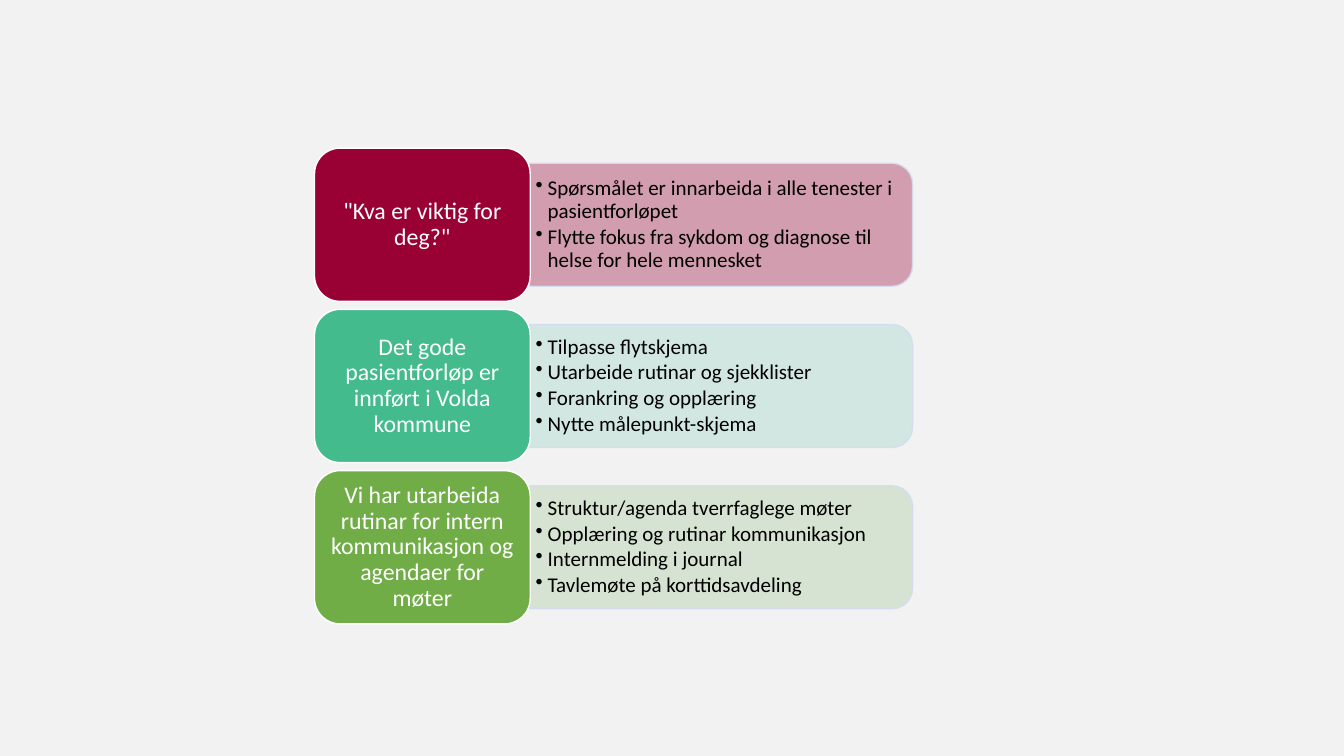
import pptx
import pptx.util
import pptx.dml.color
import pptx.enum.shapes
import pptx.enum.text
import pptx.oxml
import pptx.oxml.ns

Inches = pptx.util.Inches
Pt = pptx.util.Pt
ShapeKind = pptx.enum.shapes.MSO_SHAPE
Align = pptx.enum.text.PP_ALIGN

# Slide size in inches and its grid of 100 columns by 100 rows
WIDTH, HEIGHT = 13.333, 7.5
COLUMN, ROW = WIDTH / 100, HEIGHT / 100

# Layout in columns and rows
GOAL_LEFT, GOAL_WIDTH, GOAL_HEIGHT = 23.4, 16.05, 20.27
PANEL_LEFT, PANEL_WIDTH, PANEL_HEIGHT = 39.4, 28.5, 16.27
TEXT_WIDTH, TEXT_HEIGHT = 28.05, 14.67
FIRST_MIDDLE, PITCH = 29.73, 21.33

COLOURS = {
    "background": "F2F2F2",
    "panel_line": "D2DEEF",
    "white": "FFFFFF",
    "black": "000000",
    "red": "990033",
    "green": "43BB8D",
    "pale_green": "CFE6E0",
    "olive": "70AD47",
    "pale_olive": "D4E2CF",
}

# Goal, goal colour, panel colour, panel opacity in percent, measures
GOALS = [
    ('"Kva er viktig for deg?"', "red", "red", 35, [
        "Spørsmålet er innarbeida i alle tenester i pasientforløpet",
        "Flytte fokus fra sykdom og diagnose til helse for hele mennesket",
    ]),
    ("Det gode pasientforløp er innført i Volda kommune", "green", "pale_green", 90, [
        "Tilpasse flytskjema",
        "Utarbeide rutinar og sjekklister",
        "Forankring og opplæring",
        "Nytte målepunkt-skjema",
    ]),
    ("Vi har utarbeida rutinar for intern kommunikasjon og agendaer for møter",
     "olive", "pale_olive", 90, [
         "Struktur/agenda tverrfaglege møter",
         "Opplæring og rutinar kommunikasjon",
         "Internmelding i journal",
         "Tavlemøte på korttidsavdeling",
     ]),
]


def colour(name):
    return pptx.dml.color.RGBColor.from_string(COLOURS[name])


def set_opacity(fill_format, percent):
    """Add an alpha value to a solid fill whose colour is already set."""
    element = fill_format._xPr.find(pptx.oxml.ns.qn("a:solidFill"))[0]
    alpha = pptx.oxml.parse_xml(
        f'<a:alpha {pptx.oxml.ns.nsdecls("a")} val="{percent * 1000}"/>')
    element.append(alpha)


def add_block(page, kind, left, top, width, height, fill, line):
    box = page.shapes.add_shape(
        kind, Inches(left), Inches(top), Inches(width), Inches(height))
    box.shadow.inherit = False
    box.fill.solid()
    box.fill.fore_color.rgb = colour(fill)
    box.line.color.rgb = colour(line)
    box.line.width = Pt(1)
    return box


def add_bullet(para, indent=0.12):
    properties = para._p.get_or_add_pPr()
    properties.set("marL", str(Inches(indent)))
    properties.set("indent", str(-Inches(indent)))
    properties.append(pptx.oxml.parse_xml(
        f'<a:buChar {pptx.oxml.ns.nsdecls("a")} char="•"/>'))


def write_text(box, lines, size, ink, align, margins, after=0, bullets=False):
    frame = box.text_frame
    frame.word_wrap = True
    frame.vertical_anchor = pptx.enum.text.MSO_ANCHOR.MIDDLE
    frame.margin_left = frame.margin_right = Inches(margins[0])
    frame.margin_top = frame.margin_bottom = Inches(margins[1])
    for index, line in enumerate(lines):
        para = frame.add_paragraph() if index else frame.paragraphs[0]
        para.alignment = align
        para.line_spacing = 0.9
        para.space_after = Pt(after)
        if bullets:
            add_bullet(para)
        span = para.add_run()
        span.text = line
        span.font.name = "Calibri"
        span.font.size = Pt(size)
        span.font.color.rgb = colour(ink)


def add_panel(page, middle, fill, opacity):
    """Panel rounded on its right side: a top-rounded shape turned by 90 degrees."""
    length, thickness = PANEL_WIDTH * COLUMN, PANEL_HEIGHT * ROW
    centre = PANEL_LEFT * COLUMN + length / 2
    panel = add_block(page, ShapeKind.ROUND_2_SAME_RECTANGLE,
                      centre - thickness / 2, middle - length / 2,
                      thickness, length, fill, "panel_line")
    panel.rotation = 90
    set_opacity(panel.fill, opacity)
    set_opacity(panel.line.fill, 90)


def add_measures(page, middle, measures):
    height = TEXT_HEIGHT * ROW
    box = page.shapes.add_textbox(
        Inches(PANEL_LEFT * COLUMN), Inches(middle - height / 2),
        Inches(TEXT_WIDTH * COLUMN), Inches(height))
    write_text(box, measures, size=15, ink="black", align=Align.LEFT,
               margins=(0.06, 0.03), after=2.25, bullets=True)


def add_goal(page, middle, goal, fill):
    height = GOAL_HEIGHT * ROW
    box = add_block(page, ShapeKind.ROUNDED_RECTANGLE,
                    GOAL_LEFT * COLUMN, middle - height / 2,
                    GOAL_WIDTH * COLUMN, height, fill, "white")
    write_text(box, [goal], size=17, ink="white", align=Align.CENTER,
               margins=(0.07, 0.04))


def main():
    deck = pptx.Presentation()
    deck.slide_width, deck.slide_height = Inches(WIDTH), Inches(HEIGHT)
    page = deck.slides.add_slide(deck.slide_layouts[6])
    page.background.fill.solid()
    page.background.fill.fore_color.rgb = colour("background")

    # One row per goal: panel, its measures, then the goal on top
    for index, (goal, fill, panel_fill, opacity, measures) in enumerate(GOALS):
        middle = (FIRST_MIDDLE + index * PITCH) * ROW
        add_panel(page, middle, panel_fill, opacity)
        add_measures(page, middle, measures)
        add_goal(page, middle, goal, fill)

    deck.save("out.pptx")


if __name__ == "__main__":
    main()
